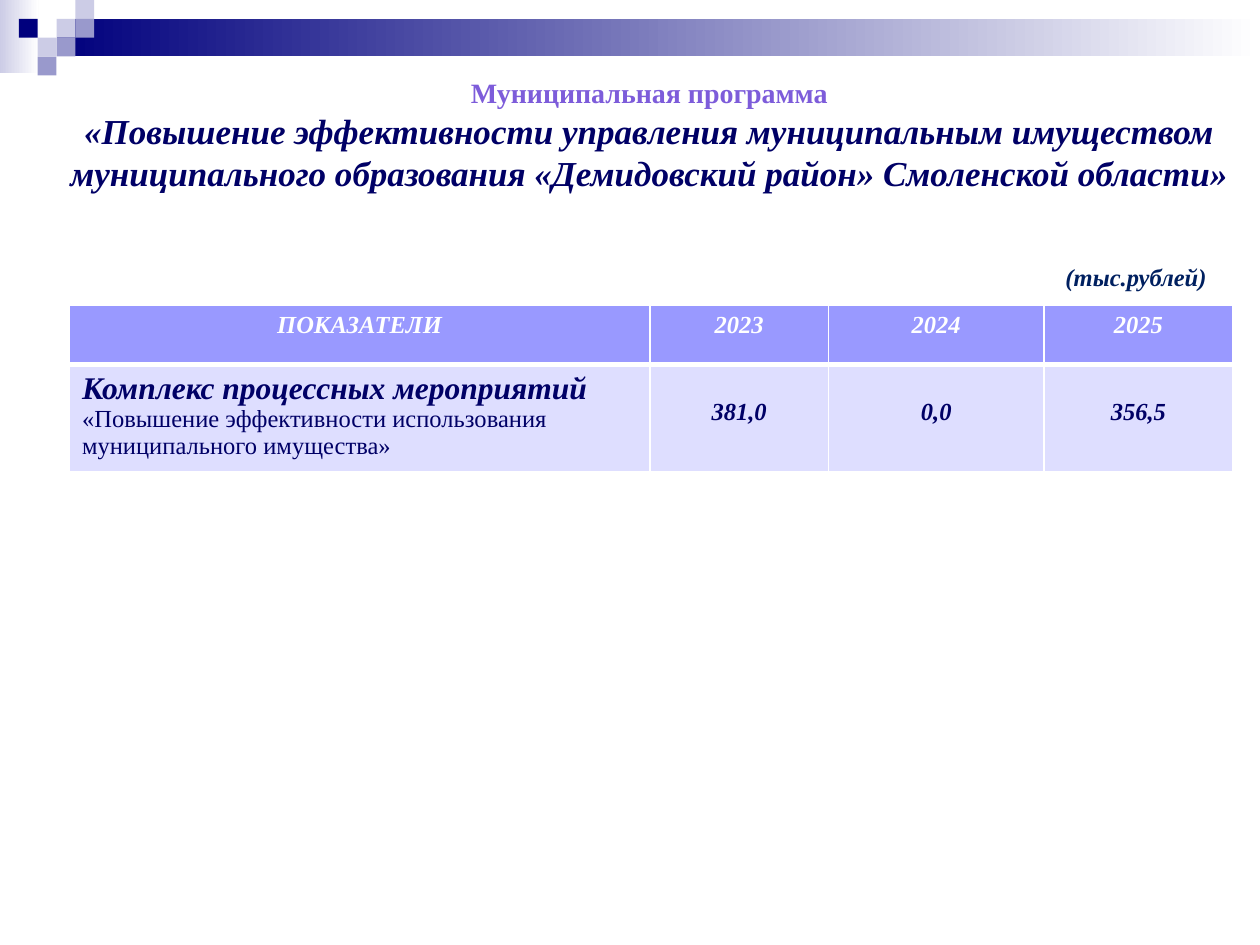
from lxml import etree
from pptx import Presentation
from pptx.dml.color import RGBColor
from pptx.enum.shapes import MSO_SHAPE
from pptx.enum.text import MSO_ANCHOR, MSO_AUTO_SIZE, PP_ALIGN
from pptx.oxml.ns import qn
from pptx.util import Cm, Pt

RECTANGLE = MSO_SHAPE.RECTANGLE
TOP = MSO_ANCHOR.TOP
NO_AUTOFIT = MSO_AUTO_SIZE.NONE
CENTER, LEFT = PP_ALIGN.CENTER, PP_ALIGN.LEFT

FONT = "Times New Roman"
WHITE, NAVY, LAVENDER, PERIWINKLE = "FFFFFF", "00007D", "CCCCE6", "9999CC"
INK, VIOLET, UNIT_BLUE = "000066", "7D5CDA", "002060"
HEADER_FILL, BODY_FILL = "9999FF", "DEDEFF"


def rgb(value):
    return RGBColor.from_string(value)


class SlideBuilder:
    def __init__(self, slide):
        self.slide = slide

    def style(self, font, size, color, bold=True, italic=True):
        font.name, font.size = FONT, Pt(size)
        font.bold, font.italic = bold, italic
        font.color.rgb = rgb(color)

    def rectangle(self, left, top, width, height, *colors):
        """One colour gives a solid fill, two a left-to-right gradient."""
        shape = self.slide.shapes.add_shape(
            RECTANGLE, Cm(left), Cm(top), Cm(width), Cm(height))
        shape.shadow.inherit = False
        shape.line.fill.background()
        if len(colors) == 1:
            shape.fill.solid()
            shape.fill.fore_color.rgb = rgb(colors[0])
        else:
            shape.fill.gradient()
            shape.fill.gradient_angle = 0
            for stop, color in zip(shape.fill.gradient_stops, colors):
                stop.color.rgb = rgb(color)

    def title(self, left, top, width, height, lines):
        shape = self.slide.shapes.title
        shape.left, shape.top = Cm(left), Cm(top)
        shape.width, shape.height = Cm(width), Cm(height)
        frame = shape.text_frame
        frame.text = "\n".join(line[0] for line in lines)
        frame.word_wrap, frame.auto_size = True, NO_AUTOFIT
        frame.vertical_anchor = TOP
        for paragraph, (_, size, color, italic) in zip(frame.paragraphs, lines):
            paragraph.alignment = CENTER
            self.style(paragraph.font, size, color, italic=italic)

    def label(self, left, top, width, height, text, size, color):
        box = self.slide.shapes.add_textbox(Cm(left), Cm(top), Cm(width), Cm(height))
        box.text_frame.word_wrap = False
        paragraph = box.text_frame.paragraphs[0]
        paragraph.text = text
        self.style(paragraph.font, size, color)

    def table(self, left, top, widths, heights):
        table = self.slide.shapes.add_table(
            len(heights), len(widths), Cm(left), Cm(top),
            Cm(sum(widths)), Cm(sum(heights))).table
        for column, width in zip(table.columns, widths):
            column.width = Cm(width)
        for row, height in zip(table.rows, heights):
            row.height = Cm(height)
        return table

    def cell(self, cell, runs, fill, alignment=CENTER, top_border=1, bottom_border=1):
        """Each run is (text, size, colour, emphasised)."""
        paragraph = cell.text_frame.paragraphs[0]
        paragraph.alignment = alignment
        for text, size, color, emphasised in runs:
            run = paragraph.add_run()
            run.text = text
            self.style(run.font, size, color, emphasised, emphasised)
        borders = {"lnL": 1, "lnR": 1, "lnT": top_border, "lnB": bottom_border}
        properties = cell._tc.get_or_add_tcPr()
        for tag, width in borders.items():
            line = etree.SubElement(properties, qn(f"a:{tag}"), w=str(Pt(width)))
            solid = etree.SubElement(line, qn("a:solidFill"))
            etree.SubElement(solid, qn("a:srgbClr"), val=WHITE)
        cell.fill.solid()
        cell.fill.fore_color.rgb = rgb(fill)


def main():
    presentation = Presentation()
    presentation.slide_width, presentation.slide_height = Cm(25.4), Cm(19.05)
    slide = presentation.slides.add_slide(presentation.slide_layouts[5])
    builder = SlideBuilder(slide)

    # Gradient bands and corner squares
    builder.rectangle(0, 0, 0.78, 1.47, LAVENDER, WHITE)
    builder.rectangle(1.14, 0.38, 24.26, 0.76, NAVY, WHITE)
    square = 0.38
    squares = [(3, 1, LAVENDER), (4, 0, LAVENDER), (4, 1, PERIWINKLE),
               (2, 2, LAVENDER), (1, 1, NAVY), (3, 2, PERIWINKLE),
               (2, 3, PERIWINKLE)]
    for column, row, color in squares:
        builder.rectangle(column * square, row * square, square, square, color)

    # Title
    builder.title(0.78, 1.4, 24.62, 3.5, [
        ("Муниципальная программа", 16, VIOLET, False),
        ("«Повышение эффективности управления муниципальным имуществом "
         "муниципального образования «Демидовский район» Смоленской области»",
         20, INK, True),
    ])

    # Indicator table
    table = builder.table(1.4, 6.15, [11.7, 3.6, 4.35, 3.8], [1.2, 2.16])
    for column, text in enumerate(["ПОКАЗАТЕЛИ", "2023", "2024", "2025"]):
        builder.cell(table.cell(0, column), [(text, 14, WHITE, True)],
                     HEADER_FILL, bottom_border=3)
    builder.cell(table.cell(1, 0), [
        ("Комплекс процессных мероприятий ", 18, INK, True),
        ("«Повышение эффективности использования муниципального имущества»",
         14, INK, False),
    ], BODY_FILL, LEFT, top_border=3)
    for column, text in enumerate(["381,0", "0,0", "356,5"], start=1):
        cell = table.cell(1, column)
        cell.margin_top = Cm(0.68)
        builder.cell(cell, [(text, 14, INK, True)], BODY_FILL, top_border=3)

    # Unit of measure
    builder.label(21.23, 5.16, 3.38, 0.86, "(тыс.рублей)", 14, UNIT_BLUE)

    presentation.save("out.pptx")


if __name__ == "__main__":
    main()
